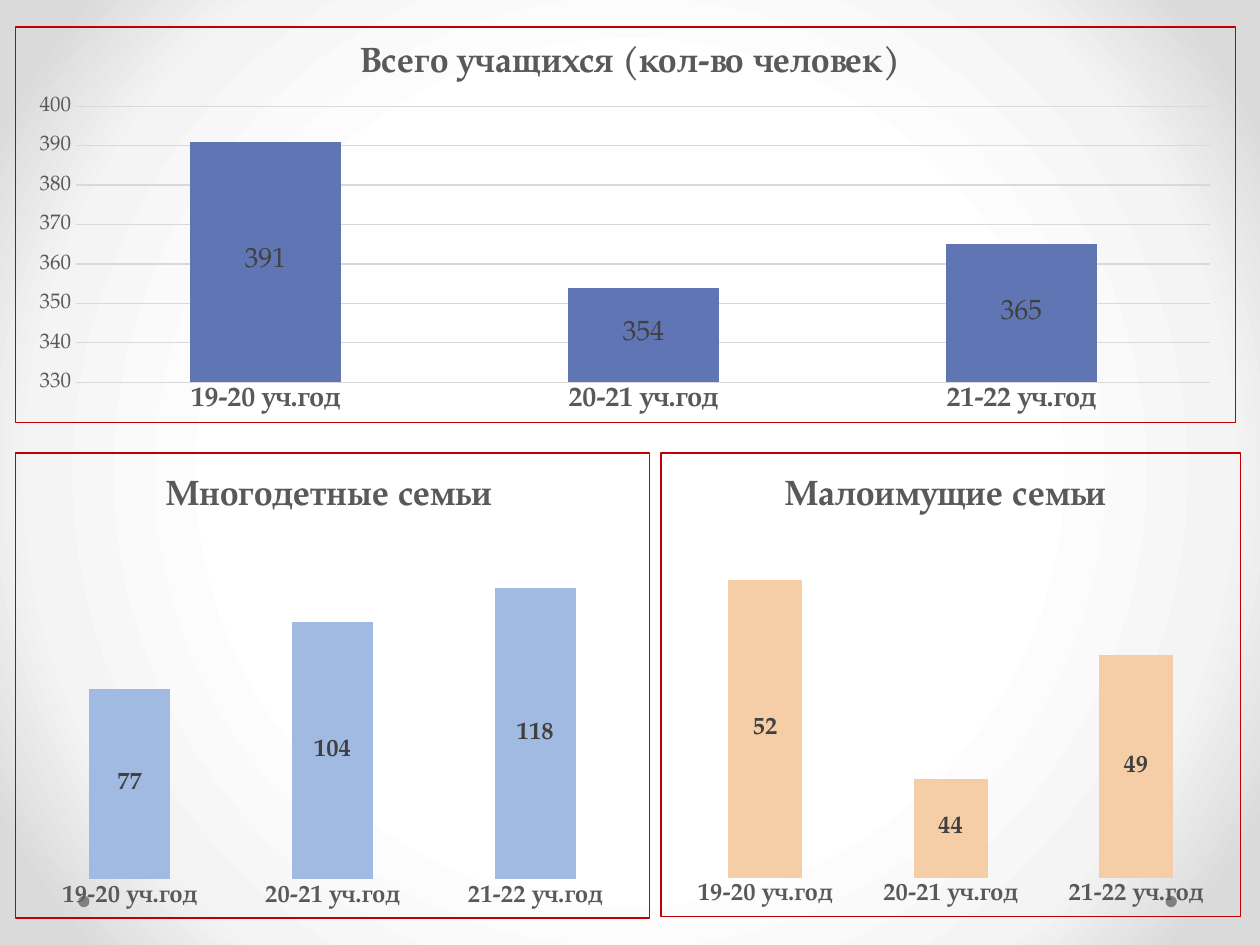
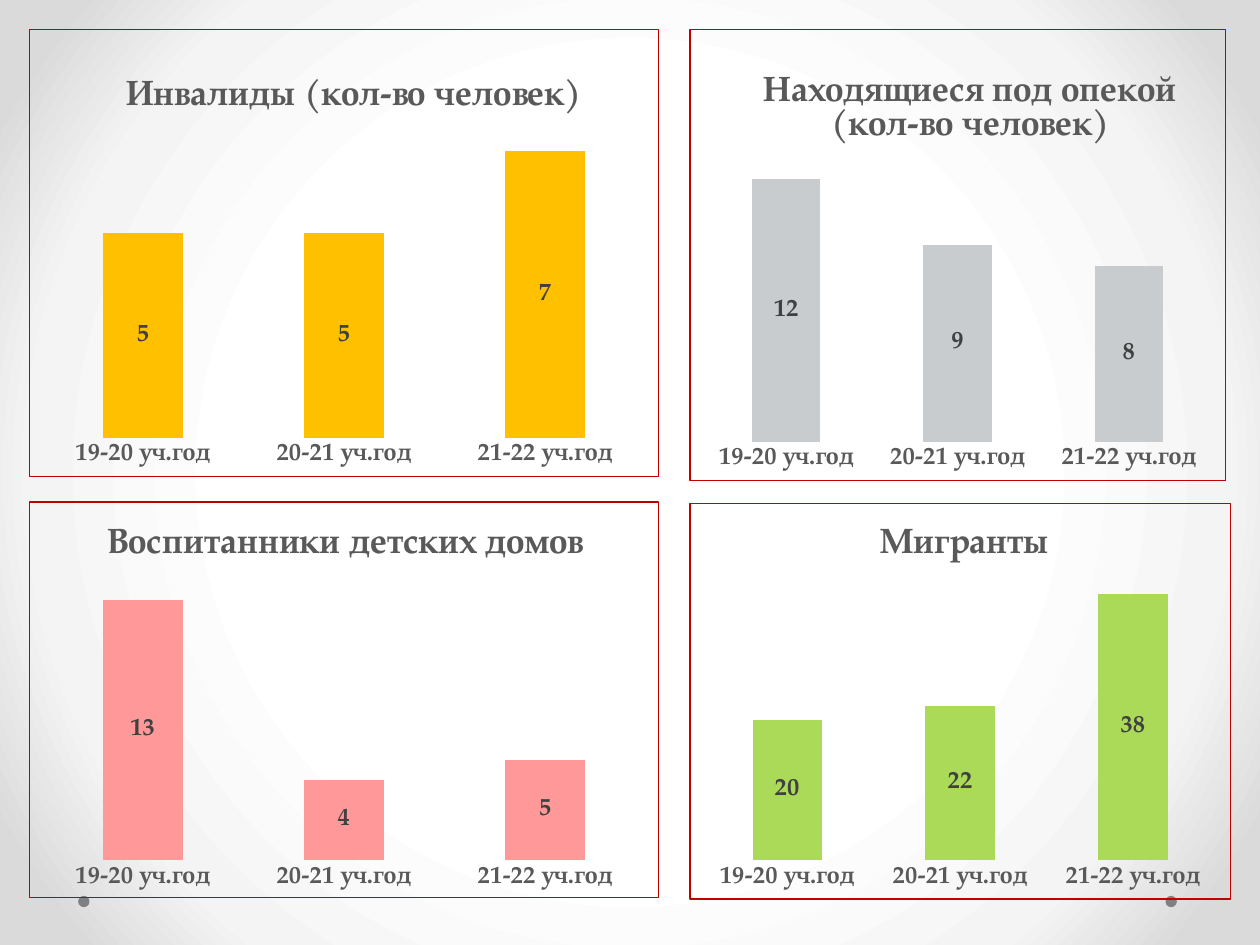
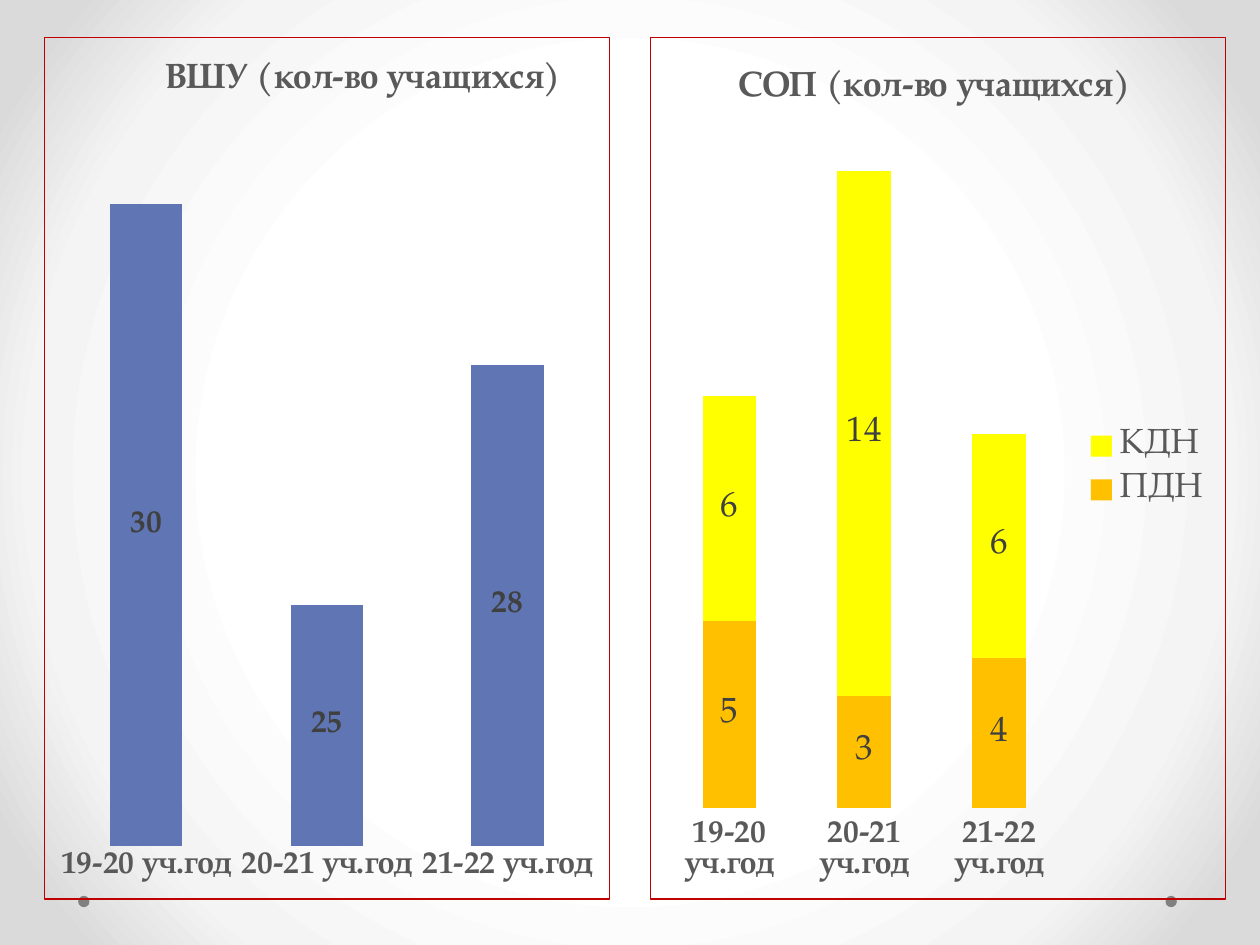
from lxml import etree
from pptx import Presentation
from pptx.chart.data import CategoryChartData
from pptx.dml.color import RGBColor
from pptx.enum.chart import XL_CHART_TYPE, XL_LABEL_POSITION, XL_LEGEND_POSITION, XL_TICK_MARK
from pptx.enum.shapes import MSO_SHAPE
from pptx.oxml import parse_xml
from pptx.oxml.ns import nsdecls, qn
from pptx.util import Inches, Pt

STACKED = XL_CHART_TYPE.COLUMN_STACKED
CENTER = XL_LABEL_POSITION.CENTER
LEGEND_RIGHT = XL_LEGEND_POSITION.RIGHT
NO_TICK, TICK_OUT = XL_TICK_MARK.NONE, XL_TICK_MARK.OUTSIDE
BLANK_LAYOUT = 6

FONT = "TeX Gyre Pagella"
TEXT, LABEL, GRID, BORDER, DOT = "595959", "404040", "D9D9D9", "C00000", "808080"
BACKGROUND_STOPS = [(50, "FFFFFF"), (76, "F4F4F4"), (92, "DADADA")]
DOT_LEFTS, DOT_TOP, DOT_SIZE = (0.62, 9.25), 7.11, 0.09
SIDE_INSET = 0.02  # share of the chart width left free beside the columns

YEARS = ["19-20 уч.год", "20-21 уч.год", "21-22 уч.год"]
DEFAULTS = {"axis_size": 14, "label_size": 14, "label_bold": True, "minimum": 0,
            "value_axis": False, "legend": False, "tick": NO_TICK}

# box: left, top, width, height; title_at: left, top; plot_y: top, bottom; plot_x: left, right
SLIDES = [
    [
        {"title": "Малоимущие семьи", "box": (5.24, 3.59, 4.61, 3.69), "title_at": (6.18, 3.73),
         "plot_y": (4.21, 6.97), "minimum": 40, "maximum": 54,
         "series": [("Семьи", (52, 44, 49), "F5CEA7")]},
        {"title": "Многодетные семьи", "box": (0.12, 3.59, 5.04, 3.7), "title_at": (1.27, 3.73),
         "plot_y": (4.23, 6.98), "maximum": 140,
         "series": [("Семьи", (77, 104, 118), "A0BAE1")]},
        {"title": "Всего учащихся (кол-во человек)", "box": (0.12, 0.21, 9.69, 3.15),
         "title_at": (2.81, 0.29), "plot_x": (0.6, 9.61), "plot_y": (0.84, 3.04),
         "minimum": 330, "maximum": 400, "value_axis": True,
         "axis_size": 16, "label_size": 16, "label_bold": False,
         "series": [("Учащиеся", (391, 354, 365), "6076B4")]},
    ],
    [
        {"title": "Инвалиды (кол-во человек)", "box": (0.23, 0.23, 5, 3.56),
         "title_at": (0.95, 0.55), "plot_y": (0.87, 3.48), "maximum": 8,
         "series": [("Учащиеся", (5, 5, 7), "FFC000")]},
        {"title": "Находящиеся под опекой (кол-во человек)", "box": (5.47, 0.23, 4.26, 3.59),
         "title_at": (6.01, 0.52), "plot_y": (1.07, 3.51), "maximum": 14,
         "series": [("Учащиеся", (12, 9, 8), "C8CCCE")]},
        {"title": "Воспитанники детских домов", "box": (0.23, 3.98, 5, 3.15),
         "title_at": (0.8, 4.11), "plot_y": (4.6, 6.83), "maximum": 14,
         "series": [("Учащиеся", (13, 4, 5), "FF9999")]},
        {"title": "Мигранты", "box": (5.47, 3.99, 4.3, 3.15),
         "title_at": (6.94, 4.11), "plot_y": (4.6, 6.83), "maximum": 40,
         "series": [("Учащиеся", (20, 22, 38), "ABD958")]},
    ],
    [
        {"title": "СОП (кол-во учащихся)", "box": (5.16, 0.29, 4.57, 6.85),
         "title_at": (5.81, 0.48), "plot_x": (5.25, 8.47), "plot_y": (1.06, 6.42), "maximum": 18,
         "axis_size": 18, "label_size": 20, "label_bold": False, "legend": True, "tick": TICK_OUT,
         "series": [("ПДН", (5, 3, 4), "FFC000"), ("КДН", (6, 14, 6), "FFFF00")]},
        {"title": "ВШУ (кол-во учащихся)", "box": (0.35, 0.29, 4.49, 6.85),
         "title_at": (1.26, 0.42), "plot_y": (0.98, 6.72), "minimum": 22, "maximum": 31,
         "axis_size": 18, "label_size": 18,
         "series": [("Учащиеся", (30, 25, 28), "6076B4")]},
    ],
]


def color(value):
    return RGBColor.from_string(value)


def set_values(target, **values):
    for name, value in values.items():
        setattr(target, name, value)


def style_font(font, size, value, bold=False):
    set_values(font, name=FONT, size=Pt(size), bold=bold)
    font.color.rgb = color(value)


def place(parent, **values):
    """Give a chart part a manual layout, in shares of the chart size."""
    layout = parent.find(qn("c:layout"))
    if layout is None:
        layout = etree.Element(qn("c:layout"))
        parent.insert(0, layout)
    for child in list(layout):
        layout.remove(child)
    manual = etree.SubElement(layout, qn("c:manualLayout"))
    for name, value in values.items():
        etree.SubElement(manual, qn(f"c:{name}")).set("val", str(value))


def style_master(presentation, slide):
    master = presentation.slide_master
    master.background.fill.solid()
    solid = master.element.find(".//" + qn("p:bgPr")).find(qn("a:solidFill"))
    stops = "".join(f'<a:gs pos="{position * 1000}"><a:srgbClr val="{value}"/></a:gs>'
                    for position, value in BACKGROUND_STOPS)
    gradient = parse_xml(
        f'<a:gradFill {nsdecls("a")} rotWithShape="1"><a:gsLst>{stops}</a:gsLst>'
        '<a:path path="circle"><a:fillToRect l="50000" t="50000" r="50000" b="50000"/></a:path>'
        '</a:gradFill>')
    solid.getparent().replace(solid, gradient)
    for left in DOT_LEFTS:
        dot = slide.shapes.add_shape(MSO_SHAPE.OVAL, *map(Inches, (left, DOT_TOP, DOT_SIZE, DOT_SIZE)))
        dot.shadow.inherit = False
        dot.fill.solid()
        dot.fill.fore_color.rgb = color(DOT)
        dot.line.fill.background()
        master.element.cSld.spTree.append(dot.element)


def style_axes(chart, panel):
    categories, values = chart.category_axis, chart.value_axis
    set_values(categories, major_tick_mark=panel["tick"], minor_tick_mark=NO_TICK,
               has_major_gridlines=False)
    style_font(categories.tick_labels.font, panel["axis_size"], TEXT, True)
    categories.format.line.fill.background()
    set_values(values, minimum_scale=panel["minimum"], maximum_scale=panel["maximum"],
               visible=panel["value_axis"], has_major_gridlines=panel["value_axis"])
    if panel["value_axis"]:
        set_values(values, major_unit=10, major_tick_mark=NO_TICK, minor_tick_mark=NO_TICK)
        style_font(values.tick_labels.font, 12, TEXT)
        values.format.line.fill.background()
        for line in (values.major_gridlines.format.line, categories.format.line):
            line.color.rgb = color(GRID)
            line.width = Pt(0.75)


def style_series(chart, panel):
    plot = chart.plots[0]
    set_values(plot, gap_width=150, overlap=100, vary_by_categories=False)
    for series, (_, _, fill) in zip(plot.series, panel["series"]):
        series.format.fill.solid()
        series.format.fill.fore_color.rgb = color(fill)
        labels = series.data_labels
        set_values(labels, show_value=True, position=CENTER)
        style_font(labels.font, panel["label_size"], LABEL, panel["label_bold"])


def add_panel(slide, content):
    panel = DEFAULTS | content
    left, top, width, height = panel["box"]
    data = CategoryChartData()
    data.categories = YEARS
    for name, values, _ in panel["series"]:
        data.add_series(name, values)
    chart = slide.shapes.add_chart(STACKED, *map(Inches, panel["box"]), data).chart
    style_font(chart.font, 10, "000000")
    style_axes(chart, panel)
    style_series(chart, panel)

    chart.has_title = True
    run = chart.chart_title.text_frame.paragraphs[0].add_run()
    run.text = panel["title"]
    style_font(run.font, 20, TEXT, True)
    title_left, title_top = panel["title_at"]
    place(chart.chart_title.element, xMode="edge", yMode="edge",
          x=(title_left - left) / width, y=(title_top - top) / height)

    inset = SIDE_INSET * width
    plot_left, plot_right = panel.get("plot_x", (left + inset, left + width - inset))
    plot_top, plot_bottom = panel["plot_y"]
    place(chart.element.find(".//" + qn("c:plotArea")), layoutTarget="inner",
          xMode="edge", yMode="edge",
          x=(plot_left - left) / width, y=(plot_top - top) / height,
          w=(plot_right - plot_left) / width, h=(plot_bottom - plot_top) / height)

    chart.has_legend = panel["legend"]
    if panel["legend"]:
        set_values(chart.legend, position=LEGEND_RIGHT, include_in_layout=False)
        style_font(chart.legend.font, 20, TEXT)

    chart.element.find(qn("c:chart")).addnext(parse_xml(
        f'<c:spPr {nsdecls("c", "a")}><a:noFill/><a:ln w="{Pt(0.75)}"><a:solidFill>'
        f'<a:srgbClr val="{BORDER}"/></a:solidFill></a:ln></c:spPr>'))


def main():
    presentation = Presentation()
    set_values(presentation, slide_width=Inches(10), slide_height=Inches(7.5))
    for panels in SLIDES:
        slide = presentation.slides.add_slide(presentation.slide_layouts[BLANK_LAYOUT])
        for panel in panels:
            add_panel(slide, panel)
    style_master(presentation, presentation.slides[0])
    presentation.save("out.pptx")


if __name__ == "__main__":
    main()
